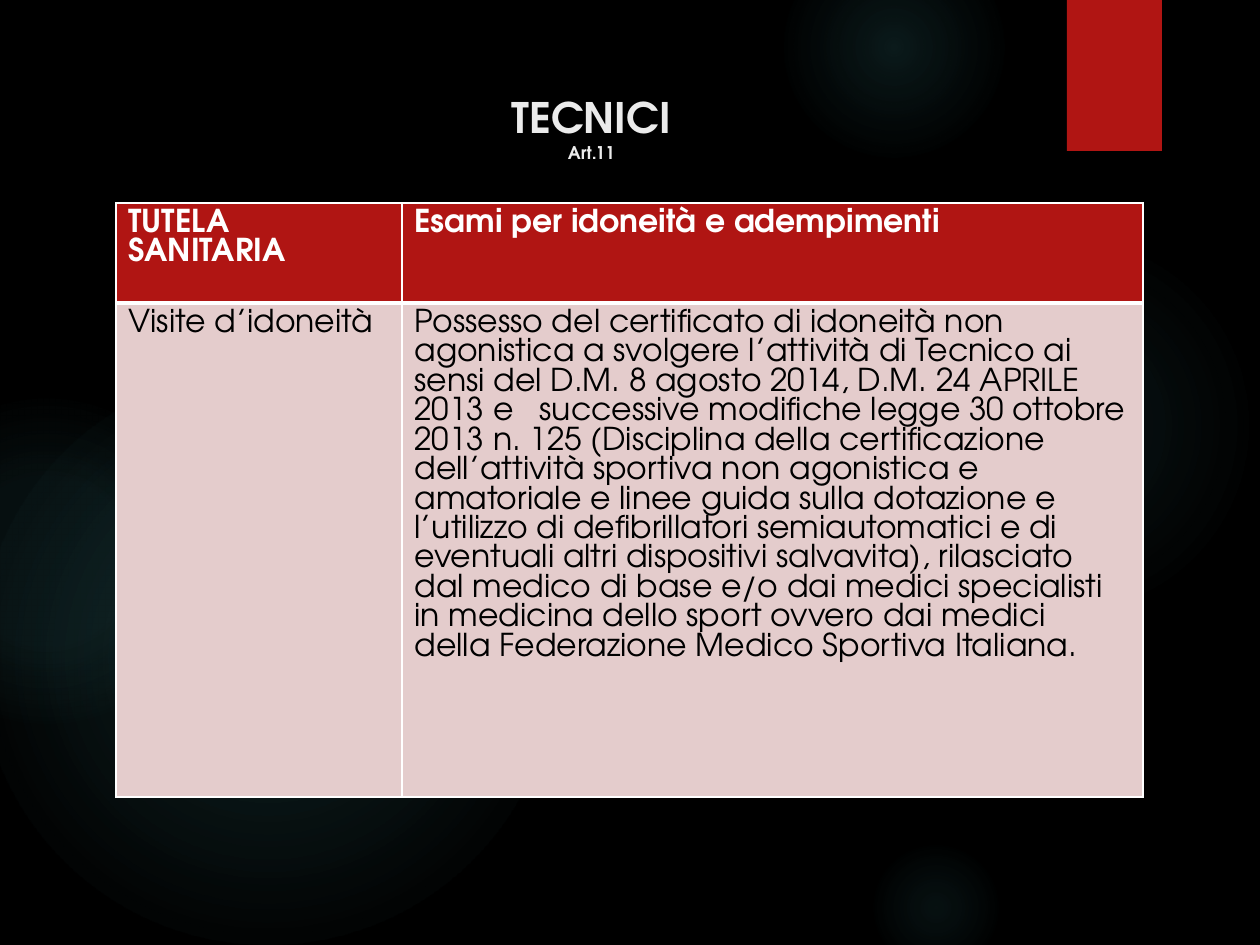
from lxml.etree import SubElement
from pptx import Presentation
from pptx.dml.color import RGBColor
from pptx.enum.shapes import MSO_SHAPE
from pptx.enum.text import MSO_ANCHOR, PP_ALIGN
from pptx.oxml.ns import qn
from pptx.util import Pt

PX = 914400 / 126
BLACK = RGBColor(0x00, 0x00, 0x00)
WHITE = RGBColor(0xFF, 0xFF, 0xFF)
LIGHT = RGBColor(0xEB, 0xEB, 0xEB)
RED = RGBColor(0xB0, 0x15, 0x13)
PINK = RGBColor(0xE4, 0xCC, 0xCC)
TEAL = RGBColor(0x50, 0xB9, 0xC1)

FONT = "TeX Gyre Adventor"
TITLE = {"name": FONT, "size": Pt(24), "bold": True}
SUBTITLE = {**TITLE, "size": Pt(10)}
HEADER = {"name": FONT, "size": Pt(18), "bold": True}
BODY = {**HEADER, "bold": False}

GLOWS = [
    (868, 231, 388, ((0, 7), (36, 6), (69, 0))),
    (784, -63, 220, ((0, 14), (36, 7), (73, 0))),
    (868, 840, 136, ((0, 9), (36, 5), (66, 0))),
    (-21, 368, 577, ((0, 11), (36, 10), (75, 0))),
    (-116, 399, 325, ((0, 8), (36, 8), (72, 0))),
]
ROWS = [
    ("TUTELA SANITARIA", "Esami per idoneità e adempimenti"),
    (
        "Visite d’idoneità",
        "Possesso del certificato di idoneità non agonistica a svolgere "
        "l’attività di Tecnico ai sensi del D.M. 8 agosto 2014, D.M. 24 APRILE "
        "2013 e   successive modifiche legge 30 ottobre 2013 n. 125 (Disciplina "
        "della certificazione dell’attività sportiva non agonistica e amatoriale "
        "e linee guida sulla dotazione e l’utilizzo di defibrillatori "
        "semiautomatici e di eventuali altri dispositivi salvavita), rilasciato "
        "dal medico di base e/o dai medici specialisti in medicina dello sport "
        "ovvero dai medici della Federazione Medico Sportiva Italiana.",
    ),
]


def px(*lengths):
    return [round(length * PX) for length in lengths]


def add_run(paragraph, text, style, color):
    run = paragraph.add_run()
    run.text = text
    for name, value in style.items():
        setattr(run.font, name, value)
    run.font.color.rgb = color


def add_shape(slide, kind, box):
    shape = slide.shapes.add_shape(kind, *px(*box))
    shape.shadow.inherit = False
    shape.line.fill.background()
    return shape


def add_glow(slide, box, stops):
    shape = add_shape(slide, MSO_SHAPE.OVAL, box)
    shape.fill.gradient()
    gradient = shape.fill._xPr.find(qn("a:gradFill"))
    for child in list(gradient):
        gradient.remove(child)
    stop_list = SubElement(gradient, qn("a:gsLst"))
    for position, opacity in stops:
        stop = SubElement(stop_list, qn("a:gs"), pos=str(position * 1000))
        color = SubElement(stop, qn("a:srgbClr"), val=str(TEAL))
        SubElement(color, qn("a:alpha"), val=str(opacity * 1000))
    circle = SubElement(gradient, qn("a:path"), path="circle")
    SubElement(circle, qn("a:fillToRect"), dict.fromkeys("ltrb", "50000"))


def add_backdrop(slide):
    background = slide.background.fill
    background.solid()
    background.fore_color.rgb = BLACK
    for left, top, size, stops in GLOWS:
        add_glow(slide, (left, top, size, size), stops)
    ribbon = add_shape(slide, MSO_SHAPE.RECTANGLE, (1067, 0, 95, 151))
    ribbon.fill.solid()
    ribbon.fill.fore_color.rgb = RED


def add_title(slide, box):
    frame = slide.shapes.add_textbox(*px(*box)).text_frame
    frame.word_wrap = True
    frame.vertical_anchor = MSO_ANCHOR.MIDDLE
    paragraph = frame.paragraphs[0]
    paragraph.alignment = PP_ALIGN.CENTER
    add_run(paragraph, "TECNICI", TITLE, LIGHT)
    paragraph.add_line_break()
    add_run(paragraph, "Art.11", SUBTITLE, LIGHT)


def set_borders(cell, widths):
    properties = cell._tc.get_or_add_tcPr()
    for index, (side, width) in enumerate(zip("LRTB", widths)):
        line = properties.makeelement(qn(f"a:ln{side}"), {"w": str(Pt(width))})
        fill = SubElement(line, qn("a:solidFill"))
        SubElement(fill, qn("a:srgbClr"), val=str(WHITE))
        properties.insert(index, line)


def add_requirements(slide, box, column_widths, row_heights):
    table = slide.shapes.add_table(len(ROWS), len(ROWS[0]), *px(*box)).table
    for column, width in zip(table.columns, px(*column_widths)):
        column.width = width
    looks = [(HEADER, WHITE, RED, (1, 1, 1, 3)), (BODY, BLACK, PINK, (1, 1, 3, 1))]
    for row, height, texts, look in zip(table.rows, px(*row_heights), ROWS, looks):
        row.height = height
        style, color, fill, borders = look
        for cell, text in zip(row.cells, texts):
            cell.fill.solid()
            cell.fill.fore_color.rgb = fill
            set_borders(cell, borders)
            add_run(cell.text_frame.paragraphs[0], text, style, color)


def main():
    presentation = Presentation()
    presentation.slide_width, presentation.slide_height = px(1260, 945)
    slide = presentation.slides.add_slide(presentation.slide_layouts[6])
    add_backdrop(slide)
    add_title(slide, (116, 67, 951, 121))
    add_requirements(slide, (116, 203, 1027, 594), (286, 741), (100, 494))
    presentation.save("out.pptx")


if __name__ == "__main__":
    main()
